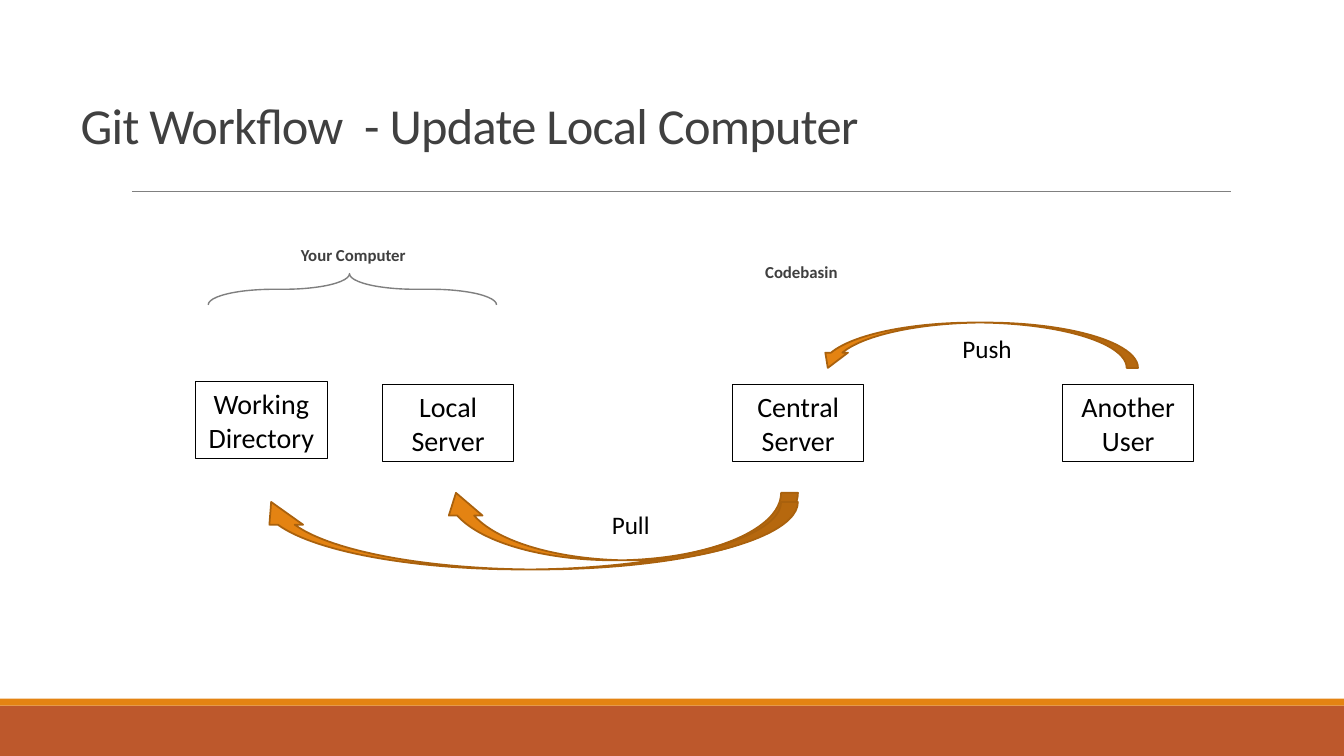
from lxml import etree
from pptx import Presentation
from pptx.dml.color import RGBColor
from pptx.enum.shapes import MSO_CONNECTOR, MSO_SHAPE
from pptx.enum.text import MSO_ANCHOR, MSO_AUTO_SIZE, PP_ALIGN
from pptx.oxml.ns import qn
from pptx.util import Pt

RECTANGLE = MSO_SHAPE.RECTANGLE
BRACE = MSO_SHAPE.RIGHT_BRACE
CURVED_ARROW = MSO_SHAPE.CURVED_DOWN_ARROW
STRAIGHT = MSO_CONNECTOR.STRAIGHT
LEFT, CENTER = PP_ALIGN.LEFT, PP_ALIGN.CENTER
TOP, MIDDLE, BOTTOM = MSO_ANCHOR.TOP, MSO_ANCHOR.MIDDLE, MSO_ANCHOR.BOTTOM
NO_AUTOFIT = MSO_AUTO_SIZE.NONE

SLIDE_W, SLIDE_H = 960, 540
TITLE_ONLY_LAYOUT = 5
FONT = "Calibri"
COLORS = {
    "footer": "BD582C",
    "accent": "E48312",
    "accent_edge": "A9610D",
    "rule": "808080",
    "brace": "7F7F7F",
    "title": "404040",
    "heading": "3F3F3F",
    "black": "000000",
}
NODE_W, NODE_H = 94, 55.6


def rgb(name):
    return RGBColor.from_string(COLORS[name])


def write(shape, text, size=18, color="black", bold=False, align=LEFT,
          anchor=TOP, inset=None, wrap=True, line_spacing=None, tracking=None):
    frame = shape.text_frame
    frame.auto_size = NO_AUTOFIT
    frame.word_wrap = wrap
    frame.vertical_anchor = anchor
    if inset is not None:
        frame.margin_left = frame.margin_right = Pt(inset)
        frame.margin_top = frame.margin_bottom = Pt(inset)
    paragraph = frame.paragraphs[0]
    paragraph.alignment = align
    if line_spacing:
        paragraph.line_spacing = line_spacing
    run = paragraph.add_run()
    run.text = text
    run.font.name = FONT
    run.font.size = Pt(size)
    run.font.bold = bold
    run.font.color.rgb = rgb(color)
    if tracking:
        run.font._element.set("spc", str(round(tracking * 100)))


def add_label(slide, box, text, **text_format):
    label = slide.shapes.add_textbox(*map(Pt, box))
    write(label, text, **text_format)


def add_preset(slide, kind, box, fill=None, line=None, line_width=1.0):
    shape = slide.shapes.add_shape(kind, *map(Pt, box))
    shape.shadow.inherit = False
    if fill:
        shape.fill.solid()
        shape.fill.fore_color.rgb = rgb(fill)
    else:
        shape.fill.background()
    if line:
        shape.line.color.rgb = rgb(line)
        shape.line.width = Pt(line_width)
    else:
        shape.line.fill.background()
    return shape


def add_footer_bands(slide, box):
    left, top, width, height = box
    stripe_h = 5
    add_preset(slide, RECTANGLE, (left, top + stripe_h, width, height - stripe_h),
               fill="footer")
    add_preset(slide, RECTANGLE, (left, top, width, stripe_h), fill="accent")


def add_header(slide, box):
    """Place the title in the box and a rule below it."""
    left, top, width, height = box
    title = slide.shapes.title
    title.left, title.top, title.width, title.height = map(Pt, box)
    write(title, "Git Workflow  - Update Local Computer", size=36, color="title",
          anchor=BOTTOM, line_spacing=0.85, tracking=-0.5)
    rule_y = Pt(top + height + 22.3)
    rule = slide.shapes.add_connector(STRAIGHT, Pt(left + 43.9), rule_y,
                                      Pt(left + width - 30.3), rule_y)
    rule.line.color.rgb = rgb("rule")
    rule.line.width = Pt(0.5)
    etree.SubElement(rule._element.spPr, qn("a:effectLst"))


def add_location_headings(slide, box):
    """Name where the servers live, with a brace over the local pair."""
    left, top, _, _ = box
    heading = {"size": 12, "color": "heading", "bold": True, "align": CENTER}
    add_label(slide, (left, top, 347.8, 28.8), "Your Computer",
              anchor=BOTTOM, inset=0, **heading)
    add_label(slide, (left + 445, top + 10.8, 97.9, 46), "Codebasin",
              anchor=MIDDLE, inset=2.9, **heading)

    span, depth = 206, 22.3
    center_x, center_y = left + 173.2, top + 46
    brace = add_preset(slide, BRACE,
                       (center_x - depth / 2, center_y - span / 2, depth, span),
                       line="brace")
    brace.adjustments[0] = 2.1
    brace.adjustments[1] = 0.49
    brace.rotation = 270


def add_node(slide, left, top, name):
    node = add_preset(slide, RECTANGLE, (left, top, NODE_W, NODE_H),
                      line="black", line_width=0.75)
    write(node, name, size=20, align=CENTER, anchor=MIDDLE)


def add_flow_arrow(slide, box, below=False):
    """Draw a curve that points left, above or below the nodes."""
    arrow = add_preset(slide, CURVED_ARROW, box, fill="accent",
                       line="accent_edge", line_width=1.25)
    arrow.adjustments[2] = 0.336
    xfrm = arrow._element.spPr.find(qn("a:xfrm"))
    xfrm.set("flipH", "1")
    if below:
        xfrm.set("flipV", "1")


def add_workflow(slide, box):
    left, top, _, _ = box
    nodes = [
        ("Working Directory", 0, 41.8),
        ("Local Server", 133.4, 44),
        ("Central Server", 383.5, 44),
        ("Another User", 619.2, 44),
    ]
    for name, x, y in nodes:
        add_node(slide, left + x, top + y, name)

    pull_right = left + 430.3
    for width, y in ((256.3, 121.7), (388.3, 128.2)):
        add_flow_arrow(slide, (pull_right - width, top + y, width, 48.2), below=True)
    add_label(slide, (left + 290.2, top + 129.6, 41.8, 28.8), "Pull", wrap=False)

    add_flow_arrow(slide, (left + 443.5, top, 229.7, 32.4))
    add_label(slide, (left + 540.7, top + 4.3, 60.5, 28.8), "Push")


def main():
    prs = Presentation()
    prs.slide_width, prs.slide_height = Pt(SLIDE_W), Pt(SLIDE_H)
    slide = prs.slides.add_slide(prs.slide_layouts[TITLE_ONLY_LAYOUT])
    add_footer_bands(slide, (0, 499, SLIDE_W, 41))
    add_header(slide, (50.4, 25.2, 859, 89.3))
    add_location_headings(slide, (78.5, 160.6, 543, 57))
    add_workflow(slide, (139.7, 230.4, 713, 177))
    prs.save("out.pptx")


if __name__ == "__main__":
    main()
